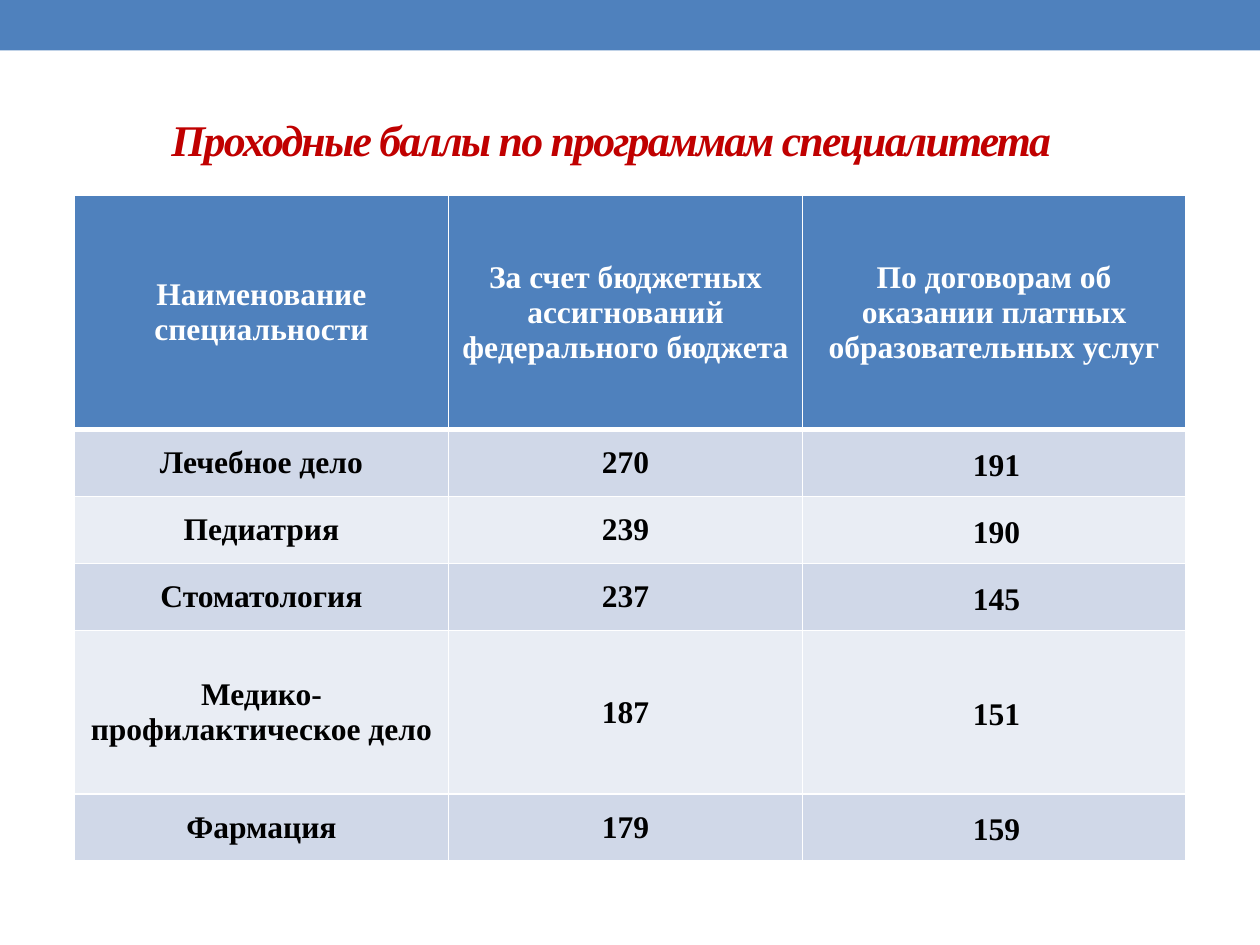
from lxml.etree import SubElement as Sub
from pptx import Presentation
from pptx.dml.color import RGBColor
from pptx.enum.shapes import MSO_SHAPE as Shape
from pptx.enum.text import MSO_ANCHOR as Anchor, PP_ALIGN as Align
from pptx.oxml.ns import qn
from pptx.util import Cm, Pt

# Content
TITLE = "Проходные баллы по программам специалитета"
HEAD = (
    "Наименование специальности",
    "За счет бюджетных ассигнований федерального бюджета",
    "По договорам об оказании платных образовательных услуг",
)
SCORES = [
    ("Лечебное дело", 270, 191),
    ("Педиатрия", 239, 190),
    ("Стоматология", 237, 145),
    ("Медико-профилактическое дело", 187, 151),
    ("Фармация", 179, 159),
]
COLS = (7.54, 7.14, 7.72)
ROWS = (4.72, 1.35, 1.35, 1.35, 3.3, 1.35)
BLUE, RED, WHITE, BLACK = "4F81BD", "C00000", "FFFFFF", "000000"
BANDS = ("D0D8E8", "E9EDF4")


def paint(fill, color):
    fill.solid()
    fill.fore_color.rgb = RGBColor.from_string(color)


def write(frame, text, size=18, color=BLACK, italic=False, track=0, lines=None):
    par = frame.paragraphs[0]
    par.alignment = Align.CENTER
    if lines:
        par.line_spacing = lines
    run = par.add_run()
    run.text = str(text)
    font = run.font
    font.name, font.size = "Times New Roman", Pt(size)
    font.bold, font.italic = True, italic
    paint(font.fill, color)
    if track:
        run._r.get_or_add_rPr().set("spc", str(track * 100))
    return par


def edge(cell, side, width):
    line = Sub(cell._tc.get_or_add_tcPr(), qn("a:" + side), w=str(Pt(width)))
    Sub(Sub(line, qn("a:solidFill")), qn("a:srgbClr"), val=WHITE)


deck = Presentation()
deck.slide_width, deck.slide_height = Cm(25.4), Cm(19.05)
slide = deck.slides.add_slide(deck.slide_layouts[5])

# Top band
band = slide.shapes.add_shape(Shape.RECTANGLE, 0, 0, deck.slide_width, Cm(1.02))
band.shadow.inherit = False
paint(band.fill, BLUE)
band.line.fill.background()

# Title
title = slide.shapes.title
title.left, title.top, title.width, title.height = map(Cm, (0.89, 1.32, 22.86, 2.97))
title.text_frame.vertical_anchor = Anchor.MIDDLE
write(title.text_frame, TITLE, size=25, color=RED, italic=True, track=-1)

# Score table
table = slide.shapes.add_table(
    len(ROWS), len(COLS), Cm(1.5), Cm(3.94), Cm(sum(COLS)), Cm(sum(ROWS))
).table
for col, width in zip(table.columns, COLS):
    col.width = Cm(width)
for row, height in zip(table.rows, ROWS):
    row.height = Cm(height)

for r, items in enumerate([HEAD] + SCORES):
    for c, text in enumerate(items):
        cell = table.cell(r, c)
        cell.vertical_anchor = Anchor.MIDDLE
        paid = r > 0 and c == 2
        par = write(cell.text_frame, text, color=BLACK if r else WHITE,
                    lines=1.15 if paid else None)
        if paid:
            cell.margin_left = cell.margin_right = Cm(0.18)
            cell.margin_top = cell.margin_bottom = 0
            par._p.get_or_add_pPr().set("marL", str(Cm(0.1)))
        # Borders come before the fill in the cell's XML
        for side in ("lnL", "lnR", "lnT", "lnB"):
            thick = (r, side) in ((0, "lnB"), (1, "lnT"))
            edge(cell, side, 3 if thick else 1)
        paint(cell.fill, BANDS[(r - 1) % 2] if r else BLUE)

deck.save("out.pptx")
